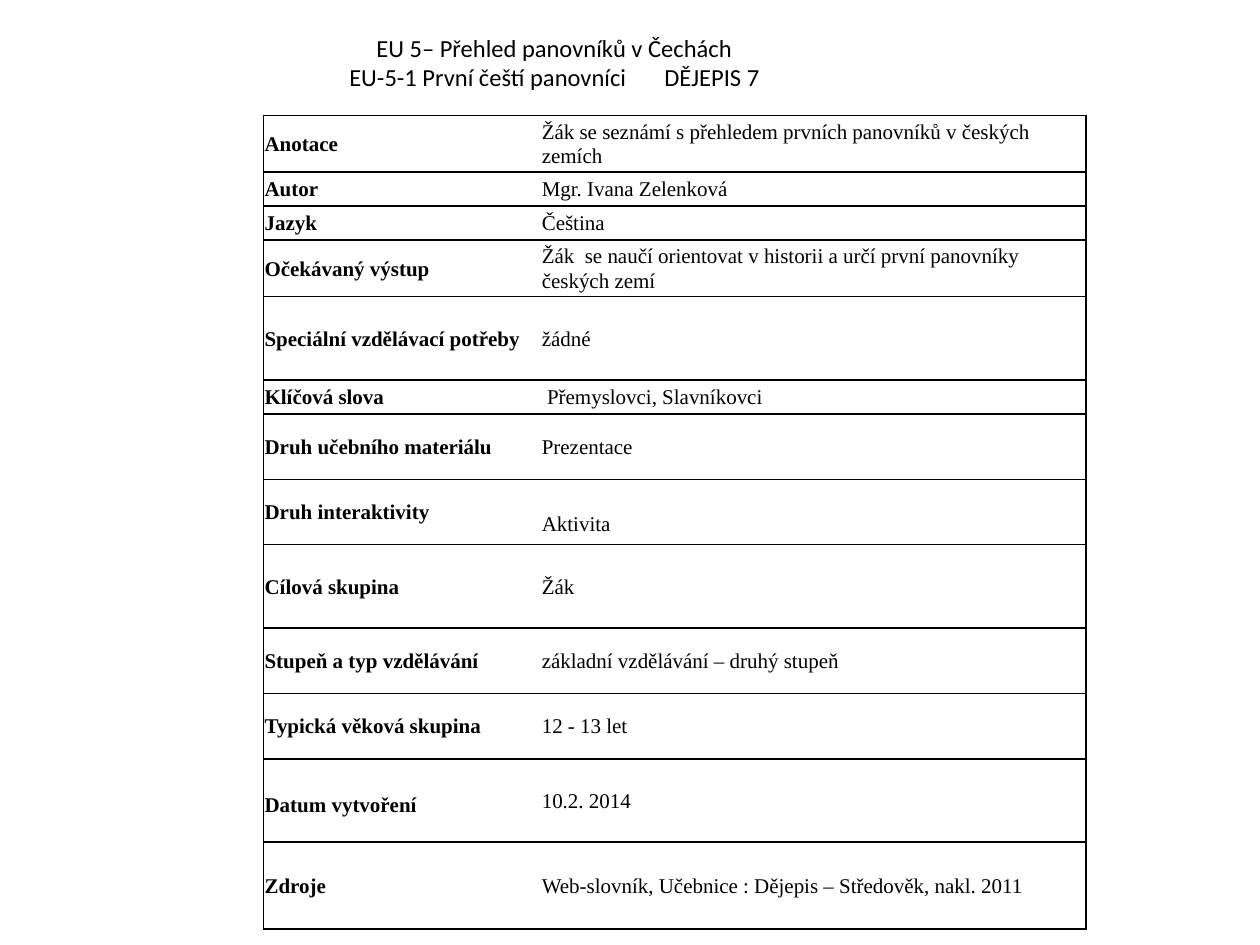
from dataclasses import dataclass

from lxml.etree import SubElement
from pptx import Presentation
from pptx.dml.color import RGBColor as RGB
from pptx.enum.text import MSO_ANCHOR as Anchor, PP_ALIGN as Align
from pptx.oxml.ns import qn
from pptx.util import Inches, Pt


@dataclass(frozen=True)
class Theme:
    ink: str = "000000"
    title_font: str = "Calibri"
    table_font: str = "Times New Roman"
    title_size: int = 14
    table_size: int = 12
    line_spacing: float = 1.07
    border: int = 1
    inset: float = 0.01


THEME = Theme()
W, H = 10, 7.5
LINE = 0.2  # height of one table text line

TITLE = ["EU 5– Přehled panovníků v Čechách",
         "EU-5-1 První čeští panovníci \tDĚJEPIS 7"]

SINGLE, DOUBLE, MEDIUM, TALL, LAST = 0.27, 0.45, 0.52, 0.66, 0.69
ROWS = [
    ("Anotace", "Žák se seznámí s přehledem prvních panovníků v českých zemích", DOUBLE),
    ("Autor", "Mgr. Ivana Zelenková", SINGLE),
    ("Jazyk", "Čeština", SINGLE),
    ("Očekávaný výstup",
     "Žák  se naučí orientovat v historii a určí první panovníky českých zemí", DOUBLE),
    ("Speciální vzdělávací potřeby", "žádné", TALL),
    ("Klíčová slova", " Přemyslovci, Slavníkovci", SINGLE),
    ("Druh učebního materiálu", "Prezentace", MEDIUM),
    ("Druh interaktivity", "Aktivita", MEDIUM),
    ("Cílová skupina", "Žák", TALL),
    ("Stupeň a typ vzdělávání", "základní vzdělávání – druhý stupeň", MEDIUM),
    ("Typická věková skupina", "12 - 13 let", MEDIUM),
    ("Datum vytvoření", "10.2. 2014", TALL),
    ("Zdroje", "Web-slovník, Učebnice : Dějepis – Středověk, nakl. 2011", LAST),
]


def add_run(p, text, font, size, bold=False):
    r = p.add_run()
    r.text = text
    r.font.name, r.font.size, r.font.bold = font, Pt(size), bold
    r.font.color.rgb = RGB.from_string(THEME.ink)


def add_title(s, lines):
    tf = s.shapes.add_textbox(Inches(0.13 * W), Inches(0.028 * H),
                              Inches(0.62 * W), Inches(0.076 * H)).text_frame
    tf.word_wrap = True
    for i, line in enumerate(lines):
        p = tf.add_paragraph() if i else tf.paragraphs[0]
        p.alignment = Align.CENTER
        add_run(p, line, THEME.title_font, THEME.title_size)


def set_borders(cell, sides):
    """Rule the given sides (of L, R, T, B) and leave the others bare."""
    tc_pr = cell._tc.get_or_add_tcPr()
    for side in "LRTB":
        ln = SubElement(tc_pr, qn(f"a:ln{side}"), w=str(Pt(THEME.border)))
        if side in sides:
            fill = SubElement(ln, qn("a:solidFill"))
            SubElement(fill, qn("a:srgbClr"), val=THEME.ink)
        else:
            SubElement(ln, qn("a:noFill"))


def fill_cell(cell, text, outer_side, bold):
    set_borders(cell, outer_side + "TB")
    cell.fill.background()
    cell.vertical_anchor = Anchor.MIDDLE
    cell.margin_left = cell.margin_right = Inches(THEME.inset)
    cell.margin_top = cell.margin_bottom = Inches(THEME.inset)
    p = cell.text_frame.paragraphs[0]
    p.line_spacing = THEME.line_spacing
    add_run(p, text, THEME.table_font, THEME.table_size, bold)


def add_details(s, rows):
    widths = 0.22 * W, 0.433 * W
    table = s.shapes.add_table(
        len(rows), 2, Inches(0.209 * W), Inches(0.122 * H),
        Inches(sum(widths)), Inches(sum(height for *_, height in rows))).table
    table.first_row = table.horz_banding = False
    for col, width in zip(table.columns, widths):
        col.width = Inches(width)
    for i, (label, value, height) in enumerate(rows):
        table.rows[i].height = Inches(height)
        fill_cell(table.cell(i, 0), label, "L", True)
        fill_cell(table.cell(i, 1), value, "R", False)
    return table


def shift_lines(table):
    """Lower the one value and the one label that sit off the middle."""
    labels = [label for label, *_ in ROWS]
    table.cell(labels.index("Druh interaktivity"), 1).margin_top = Inches(LINE)
    date = table.cell(labels.index("Datum vytvoření"), 0)
    date.vertical_anchor = Anchor.BOTTOM
    date.margin_bottom = Inches(LINE)


def main():
    prs = Presentation()
    prs.slide_width, prs.slide_height = Inches(W), Inches(H)
    s = prs.slides.add_slide(prs.slide_layouts[6])
    add_title(s, TITLE)
    shift_lines(add_details(s, ROWS))
    prs.save("out.pptx")


if __name__ == "__main__":
    main()
